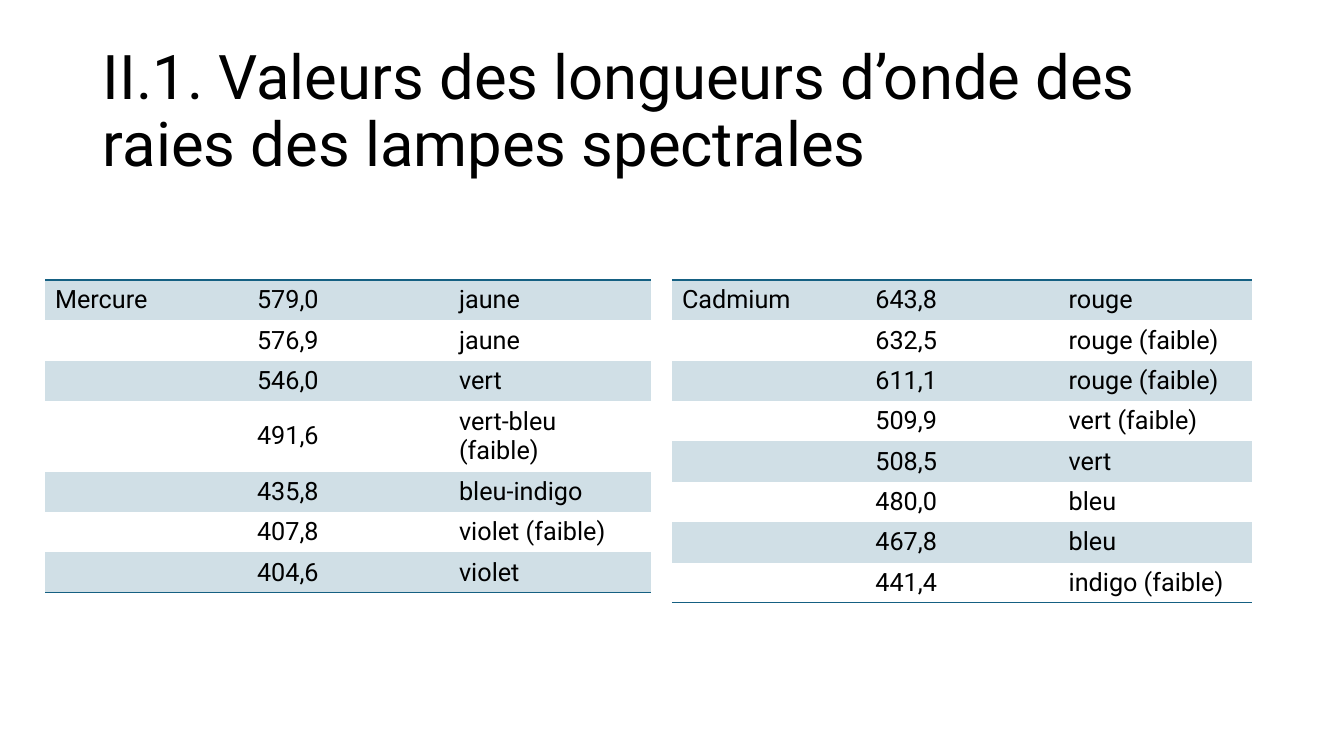
from pptx import Presentation
from pptx import util as u
from pptx.dml.color import RGBColor
from pptx.enum import text
from pptx.oxml import parse_xml
from pptx.oxml.ns import nsdecls, qn

COLORS = {"ink": "000000", "rule": "156082", "band": "D0DFE6"}
NO_STYLE = "{2D5ABB26-0587-4C30-8999-92F81FD0307C}"
MERCURE = [
    ("579,0", "jaune"),
    ("576,9", "jaune"),
    ("546,0", "vert"),
    ("491,6", "vert-bleu (faible)"),
    ("435,8", "bleu-indigo"),
    ("407,8", "violet (faible)"),
    ("404,6", "violet"),
]
CADMIUM = [
    ("643,8", "rouge"),
    ("632,5", "rouge (faible)"),
    ("611,1", "rouge (faible)"),
    ("509,9", "vert (faible)"),
    ("508,5", "vert"),
    ("480,0", "bleu"),
    ("467,8", "bleu"),
    ("441,4", "indigo (faible)"),
]


def px(length):
    return u.Inches(length / 100.8)


class SpectralSlide:
    """Draws titles and wavelength tables in one style on one slide."""

    font_name = "Roboto"

    def __init__(self, presentation):
        self.slide = presentation.slides.add_slide(presentation.slide_layouts[6])

    def style(self, paragraph, size):
        paragraph.font.name = self.font_name
        paragraph.font.size = u.Pt(size)
        paragraph.font.color.rgb = RGBColor.from_string(COLORS["ink"])

    def title(self, wording, left, top, width, height):
        frame = self.slide.shapes.add_textbox(px(left), px(top), px(width), px(height)).text_frame
        frame.word_wrap = True
        frame.vertical_anchor = text.MSO_ANCHOR.MIDDLE
        paragraph = frame.paragraphs[0]
        paragraph.text = wording
        paragraph.line_spacing = 0.9
        self.style(paragraph, 44)

    def rule(self, cell, side):
        line = parse_xml(
            f'<a:{side} {nsdecls("a")} w="{u.Pt(0.96)}"><a:solidFill>'
            f'<a:srgbClr val="{COLORS["rule"]}"/></a:solidFill></a:{side}>'
        )
        cell._tc.get_or_add_tcPr().insert(0, line)

    def lamp_table(self, lamp, lines, left, top, width, row_height=39):
        shape = self.slide.shapes.add_table(
            len(lines), 3, px(left), px(top), px(width), px(row_height * len(lines))
        )
        next(shape.element.iter(qn("a:tableStyleId"))).text = NO_STYLE
        table = shape.table
        table.first_row = table.horz_banding = False
        for row, line in enumerate(lines):
            for column, wording in enumerate((lamp if row == 0 else "", *line)):
                cell = table.cell(row, column)
                cell.text = wording
                cell.vertical_anchor = text.MSO_ANCHOR.MIDDLE
                self.style(cell.text_frame.paragraphs[0], 18)
                if row % 2:
                    cell.fill.background()
                else:
                    cell.fill.solid()
                    cell.fill.fore_color.rgb = RGBColor.from_string(COLORS["band"])
                if row == 0:
                    self.rule(cell, "lnT")
                if row == len(lines) - 1:
                    self.rule(cell, "lnB")


def main():
    presentation = Presentation()
    presentation.slide_width, presentation.slide_height = px(1344), px(756)
    page = SpectralSlide(presentation)
    page.title(
        "II.1. Valeurs des longueurs d’onde des raies des lampes spectrales", 93, 40, 1159, 146
    )
    page.lamp_table("Mercure", MERCURE, 45, 280, 606)
    page.lamp_table("Cadmium", CADMIUM, 672, 280, 580)
    presentation.save("out.pptx")


if __name__ == "__main__":
    main()
